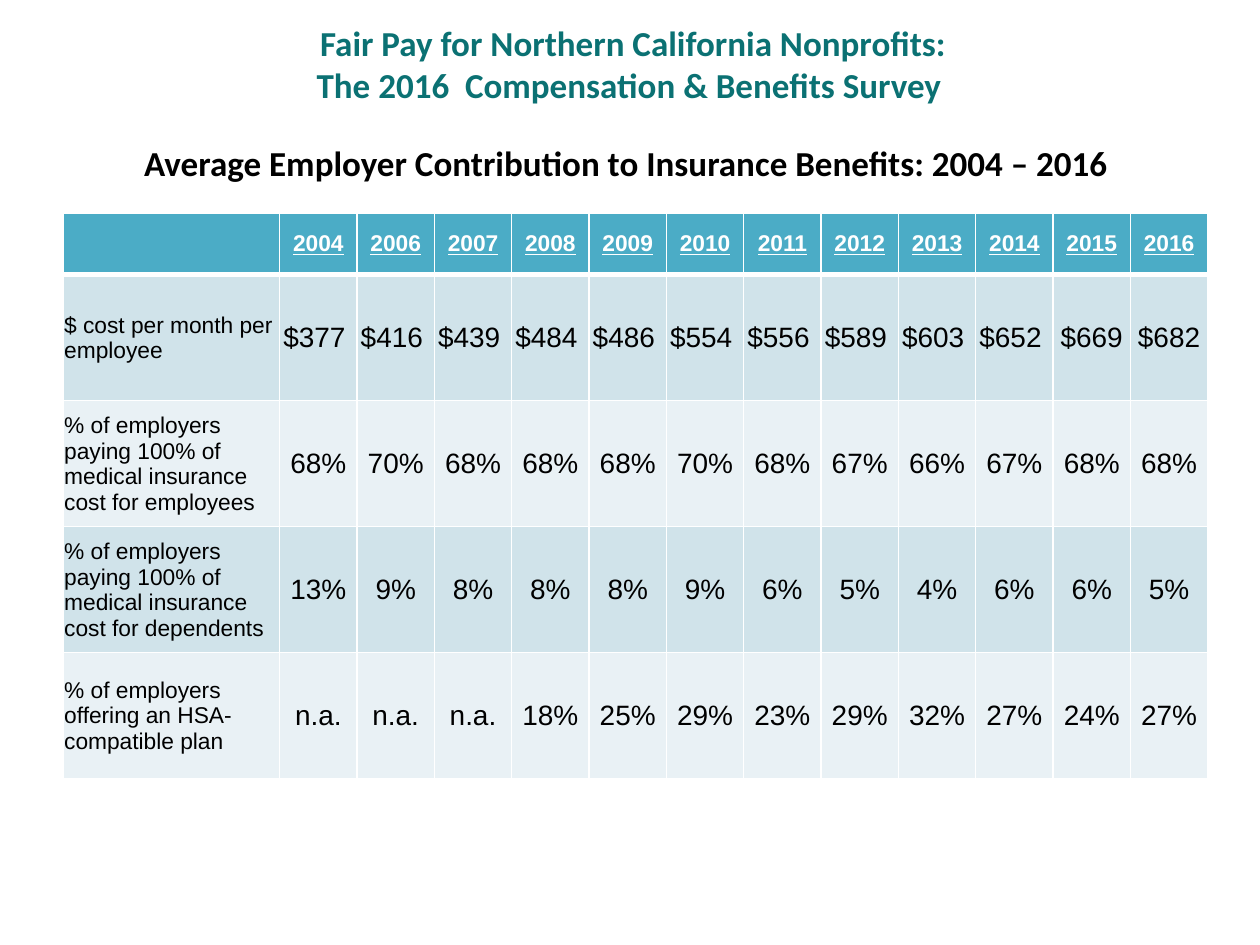
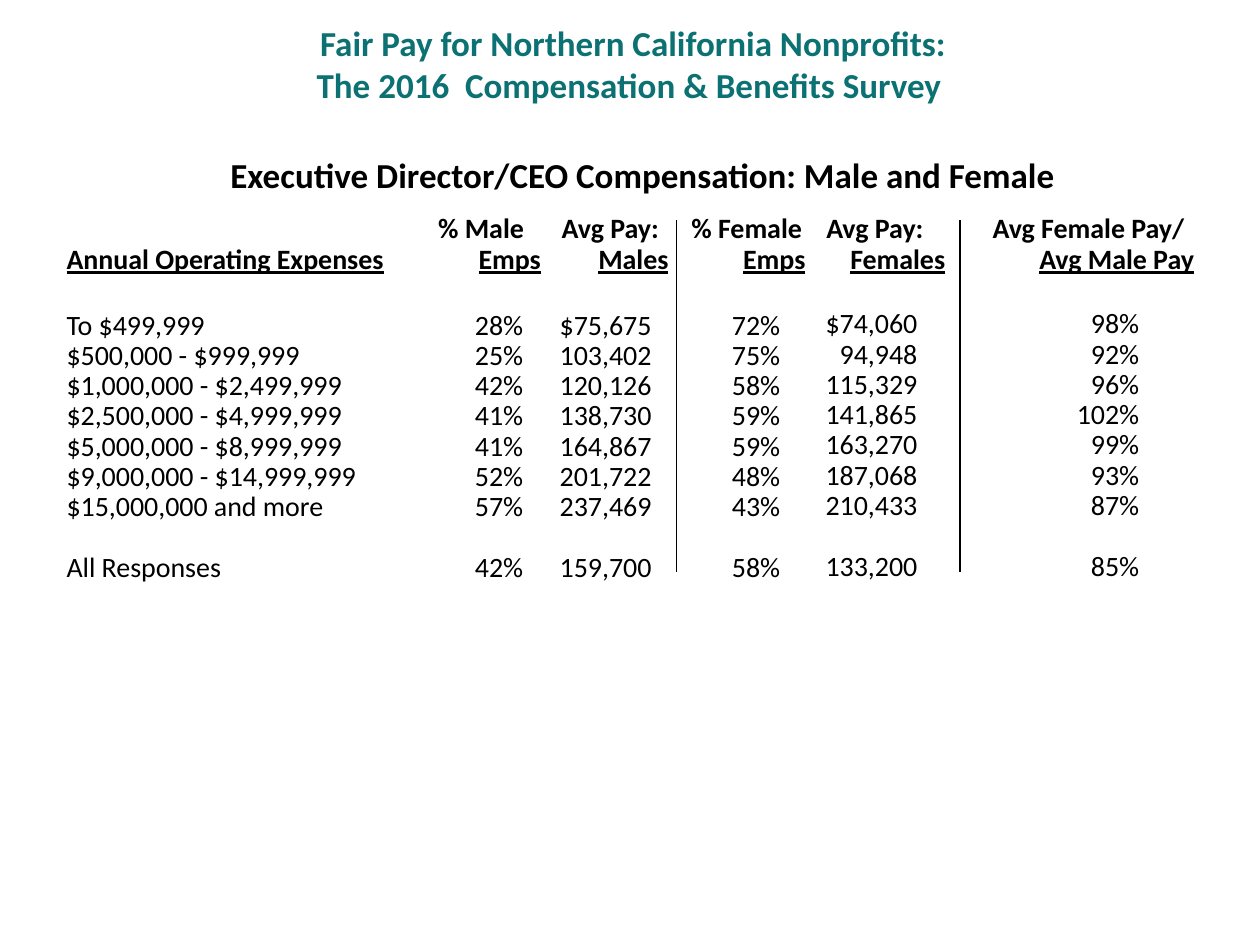
from typing import NamedTuple

from lxml.etree import SubElement
from pptx import Presentation
from pptx.dml.color import RGBColor
from pptx.enum.shapes import MSO_CONNECTOR as Link
from pptx.enum.text import MSO_ANCHOR as Anchor, PP_ALIGN as Align
from pptx.oxml import parse_xml
from pptx.oxml.ns import nsdecls, qn
from pptx.util import Emu, Inches, Pt

WIDE = Inches(10)
TALL = Inches(7.5)
TEAL = RGBColor(0x0B, 0x71, 0x73)
BLUE = RGBColor(0x4B, 0xAC, 0xC6)
MIST = RGBColor(0xD0, 0xE3, 0xEA)
PALE = RGBColor(0xE9, 0xF1, 0xF5)
BLACK = RGBColor(0, 0, 0)
WHITE = RGBColor(255, 255, 255)
HEAD = "Fair Pay for Northern California Nonprofits:\vThe 2016  Compensation & Benefits Survey "
HEAD = HEAD.replace("\v", "\n")


class Box(NamedTuple):
    """Left, top, width and height in percent of the slide."""
    x: float
    y: float
    w: float
    h: float


class Font(NamedTuple):
    size: float
    color: RGBColor = BLACK
    bold: bool = False
    under: bool = False
    name: str = "Calibri"


class Stack(NamedTuple):
    box: Box
    text: str
    align: Align = Align.RIGHT


class Label(NamedTuple):
    """Heading words and their tab stops in percent of the slide width."""
    top: str
    low: str
    start: float
    rule: float
    word: float
    end: float


TITLE = Font(20, TEAL, True)
TOPIC = Font(20, BLACK, True)
BODY = Font(16)
BOLD = Font(16, BLACK, True)
YEAR = Font(13, WHITE, True, True, "Arial")
NOTE = Font(13, name="Arial")
VALUE = Font(16, name="Arial")

COSTS = [
    "|2004|2006|2007|2008|2009|2010|2011|2012|2013|2014|2015|2016",
    "$ cost per month per employee|$377 |$416 |$439 |$484 |$486 |$554 |$556 |$589 |$603 |$652 |$669|$682",
    "% of employers paying 100% of medical insurance cost for employees"
    "|68%|70%|68%|68%|68%|70%|68%|67%|66%|67%|68%|68%",
    "% of employers paying 100% of medical insurance cost for dependents"
    "|13%|9%|8%|8%|8%|9%|6%|5%|4%|6%|6%|5%",
    "% of employers offering an HSA- compatible plan"
    "|n.a.|n.a.|n.a.|18%|25%|29%|23%|29%|32%|27%|24%|27%",
]
STACKS = [
    Stack(Box(4.3, 32.27, 27, 32.5),
          "To $499,999|$500,000 - $999,999|$1,000,000 - $2,499,999|$2,500,000 - $4,999,999|"
          "$5,000,000 - $8,999,999|$9,000,000 - $14,999,999|$15,000,000 and more|All Responses",
          Align.LEFT),
    Stack(Box(33.3, 32.27, 9.2, 30.1), "28%|25%|42%|41%|41%|52%|57%|42%"),
    Stack(Box(42.4, 32.27, 10.3, 30.1),
          "$75,675|103,402|120,126|138,730|164,867|201,722|237,469|159,700"),
    Stack(Box(53.7, 32.27, 9.2, 30.1), "72%|75%|58%|59%|59%|48%|43%|58%"),
    Stack(Box(63.5, 32.13, 10.3, 30.1),
          "$74,060|94,948|115,329|141,865|163,270|187,068|210,433|133,200"),
    Stack(Box(84, 32.13, 7.4, 30.1), "98%|92%|96%|102%|99%|93%|87%|85%"),
]
LABELS = [
    Label("% Male", "Emps", 34.8, 36.5, 38, 43.9),
    Label("Avg Pay:", "Males", 44.6, 46.5, 47.5, 54.5),
    Label("% Female", "Emps", 54.9, 57.1, 59, 65.5),
    Label("Avg Pay:", "Females", 65.6, 67, 67.5, 75.6),
    Label("Avg Female Pay/", "Avg Male Pay", 78.8, 81.1, 82.5, 95.9),
]


def wide(part: float) -> Emu:
    return Emu(round(WIDE * part / 100))


def tall(part: float) -> Emu:
    return Emu(round(TALL * part / 100))


def place(box: Box) -> tuple:
    return wide(box.x), tall(box.y), wide(box.w), tall(box.h)


def style(run, font: Font) -> None:
    run.font.name = font.name
    run.font.size = Pt(font.size)
    run.font.bold = font.bold
    run.font.underline = font.under
    run.font.color.rgb = font.color


def write(frame, text: str, font: Font, align: Align) -> None:
    frame.word_wrap = True
    frame.text = text
    for para in frame.paragraphs:
        para.alignment = align
        for run in para.runs:
            style(run, font)


def put(slide, box: Box, text: str, font: Font, align: Align = Align.CENTER):
    frame = slide.shapes.add_textbox(*place(box)).text_frame
    write(frame, text, font, align)
    return frame


def start(deck, topic: str, box: Box):
    slide = deck.slides.add_slide(deck.slide_layouts[6])
    frame = put(slide, Box(10.7, 2.27, 79.1, 8.93), HEAD, TITLE)
    frame.vertical_anchor = Anchor.MIDDLE
    put(slide, box, topic, TOPIC)
    return slide


def edge(cell, row: int) -> None:
    props = cell._tc.get_or_add_tcPr()
    bold = {"T": row == 1, "B": row == 0}
    for spot, side in enumerate("LRTB"):
        size = Pt(3 if bold.get(side) else 1)
        props.insert(spot, parse_xml(
            f'<a:ln{side} {nsdecls("a")} w="{size}"><a:solidFill>'
            f'<a:srgbClr val="{WHITE}"/></a:solidFill></a:ln{side}>'))


def inset(cell, row: int) -> None:
    side, top, low = (0.1, 0.05, 0.05) if row == 0 else (0.01, 0.01, 0)
    cell.margin_left = cell.margin_right = Inches(side)
    cell.margin_top = Inches(top)
    cell.margin_bottom = Inches(low)


def grid(slide, box: Box, lines: list[str]) -> None:
    data = [line.split("|") for line in lines]
    table = slide.shapes.add_table(len(data), len(data[0]), *place(box)).table
    for col, part in enumerate(table.columns):
        part.width = wide(6.14 if col else 17.2)
    for row, part in enumerate(table.rows):
        part.height = tall(13.33 if row else 6.53)
    for row, words in enumerate(data):
        for col, word in enumerate(words):
            cell = table.cell(row, col)
            font = YEAR if row == 0 else VALUE if col else NOTE
            align = Align.CENTER if col else Align.LEFT
            write(cell.text_frame, word, font, align)
            cell.vertical_anchor = Anchor.MIDDLE
            inset(cell, row)
            cell.fill.solid()
            cell.fill.fore_color.rgb = BLUE if row == 0 else MIST if row % 2 else PALE
            edge(cell, row)


def stops(para, marks: list[float], left: float) -> None:
    tabs = SubElement(para._p.get_or_add_pPr(), qn("a:tabLst"))
    for mark in marks:
        SubElement(tabs, qn("a:tab"), pos=str(wide(mark - left)), algn="l")


def heads(slide, box: Box) -> None:
    frame = put(slide, box, "", BOLD, Align.LEFT)
    top, low = frame.paragraphs[0], frame.add_paragraph()
    left = box.x + 1
    for para in (top, low):
        para.line_spacing = 0.94
    stops(top, [item.start for item in LABELS], left)
    stops(low, [mark for item in LABELS for mark in item[3:]], left)
    first = low.add_run()
    first.text = "Annual Operating Expenses"
    style(first, BOLD._replace(under=True))
    for item in LABELS:
        parts = [(top, "\t" + item.top, False), (low, "\t", False),
                 (low, f"\t{item.low}\t", True)]
        for para, text, under in parts:
            run = para.add_run()
            run.text = text
            style(run, BOLD._replace(under=under))


def column(slide, stack: Stack) -> None:
    text = stack.text.replace("|", "\n")
    frame = put(slide, stack.box, text, BODY, stack.align)
    for para in frame.paragraphs:
        para.line_spacing = 0.9
    frame.paragraphs[-1].space_before = Pt(17.5)


def rule(slide, x: float) -> None:
    line = slide.shapes.add_connector(
        Link.STRAIGHT, wide(x), tall(23.33), wide(x), tall(60.53))
    line.line.color.rgb = BLACK
    line.line.width = Pt(0.75)
    SubElement(line._element.spPr, qn("a:effectLst"))


def main() -> None:
    deck = Presentation()
    deck.slide_width, deck.slide_height = WIDE, TALL

    slide = start(deck, "Average Employer Contribution to Insurance Benefits: 2004 – 2016 ",
                  Box(0, 14.27, 100, 4.93))
    grid(slide, Box(5, 22.53, 90.9, 59.87), COSTS)

    slide = start(deck, "Executive Director/CEO Compensation: Male and Female",
                  Box(4, 15.6, 94, 4.93))
    heads(slide, Box(4.3, 21.87, 93, 8))
    for stack in STACKS:
        column(slide, stack)
    for x in (53.7, 76.2):
        rule(slide, x)

    deck.save("out.pptx")


if __name__ == "__main__":
    main()
